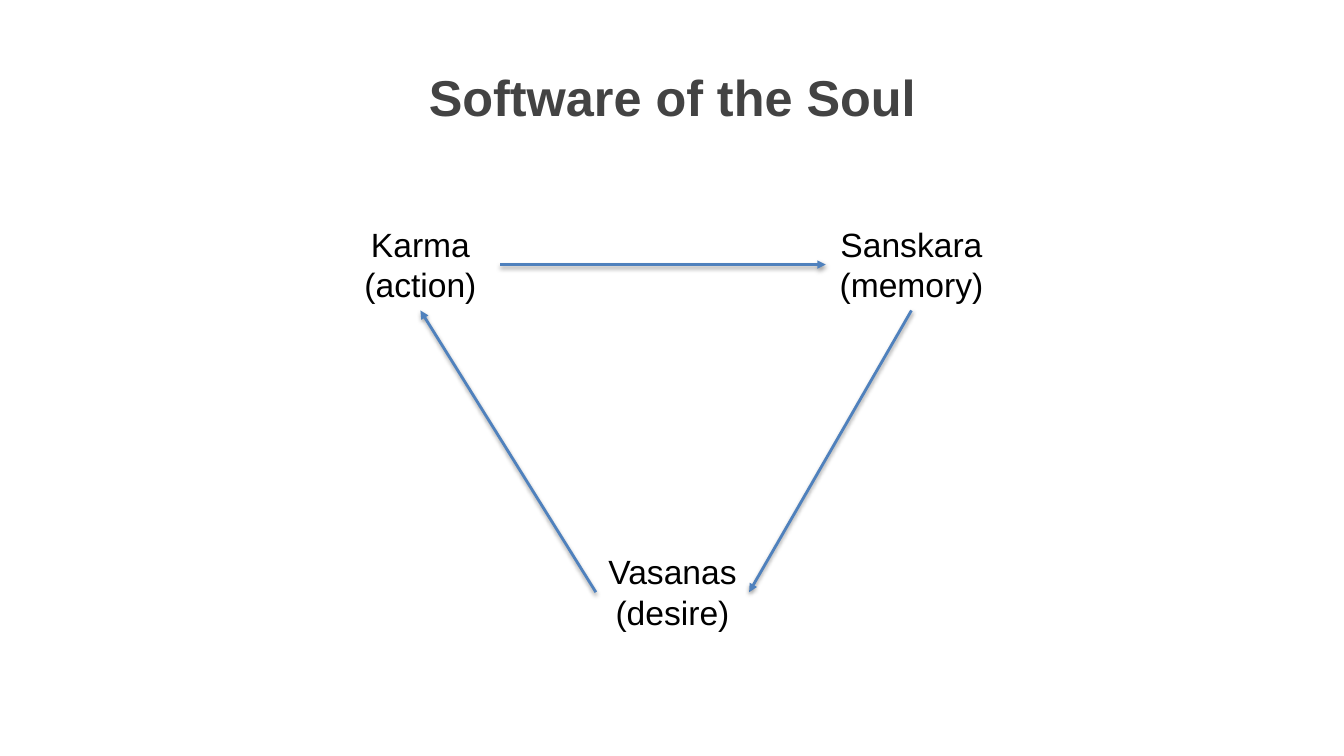
from dataclasses import dataclass

from lxml.etree import SubElement
from pptx import Presentation
from pptx.dml.color import RGBColor
from pptx.enum.shapes import MSO_CONNECTOR
from pptx.enum.text import MSO_ANCHOR, MSO_AUTO_SIZE, PP_ALIGN
from pptx.oxml import parse_xml
from pptx.oxml.ns import nsdecls, qn
from pptx.shapes.autoshape import Shape
from pptx.slide import Slide
from pptx.util import Emu, Pt

PX = 9144
TITLE_COLOR = RGBColor(0x43, 0x43, 0x43)
TEXT_COLOR = RGBColor(0x00, 0x00, 0x00)
ARROW_COLOR = RGBColor(0x4F, 0x81, 0xBD)
FONT = "Arial"
TOP, BOTTOM, NODE_HEIGHT = 217, 542, 91
LEFT_SIDE, BOTTOM_SIDE, RIGHT_SIDE = 1, 2, 3
SHADOW = (
    f'<a:effectLst {nsdecls("a")}>'
    '<a:outerShdw blurRad="40000" dist="20000" dir="5400000" rotWithShape="0">'
    '<a:srgbClr val="000000"><a:alpha val="38000"/></a:srgbClr>'
    "</a:outerShdw></a:effectLst>"
)


@dataclass(frozen=True)
class Node:
    name: str
    text: str
    x: int
    y: int
    w: int


@dataclass(frozen=True)
class Arrow:
    start: str
    start_side: int
    end: str
    end_side: int


NODES = [
    Node("karma", "Karma\n(action)", 338, TOP, 158),
    Node("sanskara", "Sanskara\v(memory)", 819, TOP, 170),
    Node("vasanas", "Vasanas\n(desire)", 591, BOTTOM, 152),
]
ARROWS = [
    Arrow("karma", RIGHT_SIDE, "sanskara", LEFT_SIDE),
    Arrow("sanskara", BOTTOM_SIDE, "vasanas", RIGHT_SIDE),
    Arrow("vasanas", LEFT_SIDE, "karma", BOTTOM_SIDE),
]


def px(n: int) -> Emu:
    return Emu(n * PX)


def write_text(sp: Shape, text: str, *, size: int, color: RGBColor,
               bold: bool = False) -> None:
    tf = sp.text_frame
    tf.word_wrap = True
    tf.text = text
    for p in tf.paragraphs:
        p.alignment = PP_ALIGN.CENTER
        for r in p.runs:
            r.font.name = FONT
            r.font.size = Pt(size)
            r.font.bold = bold
            r.font.color.rgb = color


def add_title(s: Slide, text: str) -> None:
    sp = s.shapes.title
    sp.left, sp.top, sp.width, sp.height = map(px, (167, 33, 1000, 125))
    write_text(sp, text, size=36, color=TITLE_COLOR, bold=True)
    sp.text_frame.vertical_anchor = MSO_ANCHOR.MIDDLE


def add_node(s: Slide, node: Node) -> Shape:
    sp = s.shapes.add_textbox(px(node.x), px(node.y), px(node.w), px(NODE_HEIGHT))
    write_text(sp, node.text, size=24, color=TEXT_COLOR)
    sp.text_frame.auto_size = MSO_AUTO_SIZE.SHAPE_TO_FIT_TEXT
    return sp


def add_arrow(s: Slide, arrow: Arrow, boxes: dict[str, Shape]) -> None:
    line = s.shapes.add_connector(MSO_CONNECTOR.STRAIGHT, 0, 0, 0, 0)
    line.begin_connect(boxes[arrow.start], arrow.start_side)
    line.end_connect(boxes[arrow.end], arrow.end_side)
    line.line.color.rgb = ARROW_COLOR
    line.line.width = Pt(2)
    sp_pr = line._element.spPr
    SubElement(sp_pr.find(qn("a:ln")), qn("a:tailEnd"), type="triangle")
    sp_pr.append(parse_xml(SHADOW))


def main() -> None:
    prs = Presentation()
    prs.slide_width, prs.slide_height = px(1333), px(750)
    s = prs.slides.add_slide(prs.slide_layouts[5])
    add_title(s, "Software of the Soul")
    boxes = {node.name: add_node(s, node) for node in NODES}
    for arrow in ARROWS:
        add_arrow(s, arrow, boxes)
    prs.save("out.pptx")


if __name__ == "__main__":
    main()
